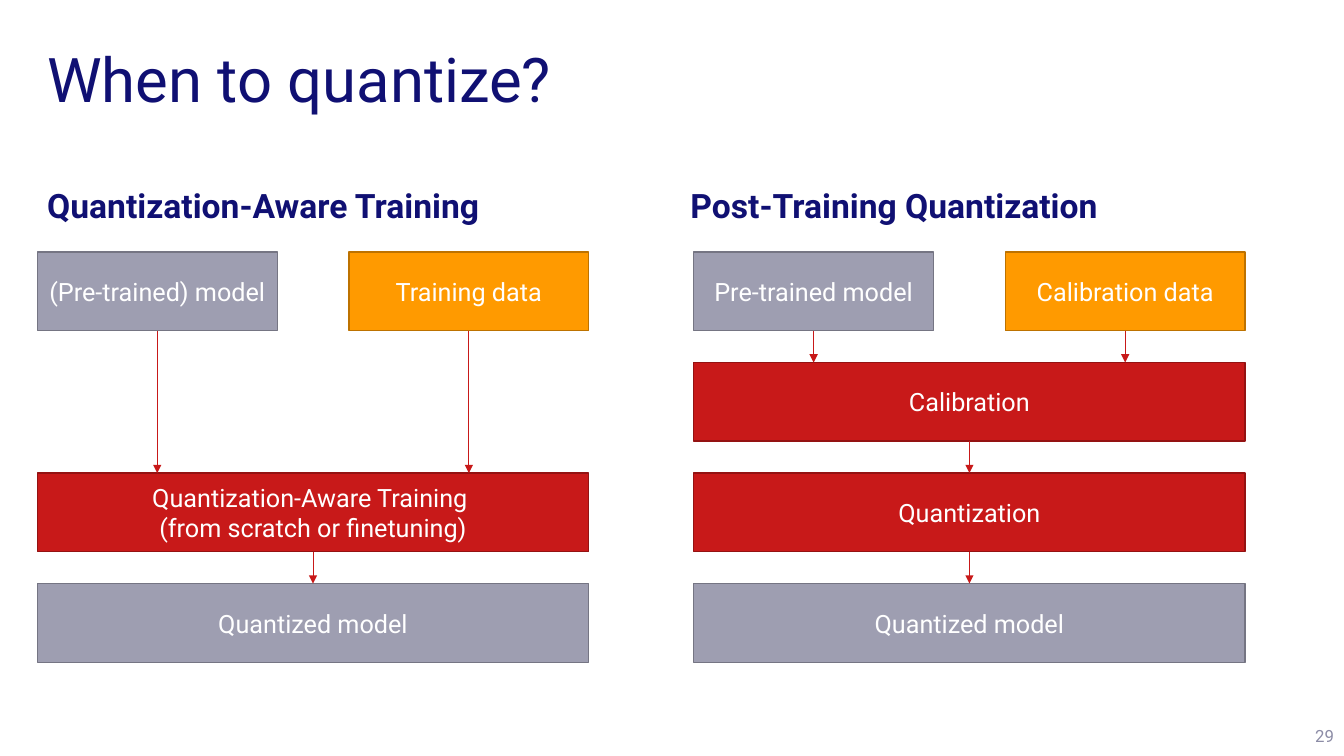
import pptx
import pptx.dml.color
import pptx.enum.shapes
import pptx.enum.text
import pptx.oxml
import pptx.oxml.ns
import pptx.util
from dataclasses import dataclass

Inches = pptx.util.Inches
Point = pptx.util.Pt
Color = pptx.dml.color.RGBColor.from_string
Align = pptx.enum.text.PP_ALIGN
Anchor = pptx.enum.text.MSO_ANCHOR


@dataclass(frozen=True)
class Theme:
    font: str = "Roboto"
    title_size: int = 44
    heading_size: int = 24
    box_size: int = 18
    number_size: int = 12
    ink: str = "101073"
    number: str = "8C8CA6"
    box_text: str = "FFFFFF"
    arrow: str = "C81919"
    # fill and outline of each kind of box
    model: tuple = ("9E9EB1", "757583")
    data: tuple = ("FF9A00", "BD7200")
    step: tuple = ("C81919", "941212")


theme = Theme()

# Grid: four rows of boxes; a row holds two inputs or one full-width box
MARGIN = 0.37
ROW_TOP, LAST_ROW_TOP = 2.5, 5.79
ROW_PITCH = (LAST_ROW_TOP - ROW_TOP) / 3
BOX_HEIGHT = 0.78
FLOW_WIDTH = 5.47
INPUT_WIDTH = 2.38
INPUT_PITCH = FLOW_WIDTH - INPUT_WIDTH

presentation = pptx.Presentation()
presentation.slide_width = Inches(13.33)
presentation.slide_height = Inches(7.5)
slide = presentation.slides.add_slide(presentation.slide_layouts[6])


def write(shape, lines, size, color, align, anchor, bold=False, spacing=1.0):
    frame = shape.text_frame
    frame.word_wrap = True
    frame.vertical_anchor = anchor
    for index, line in enumerate(lines):
        paragraph = frame.add_paragraph() if index else frame.paragraphs[0]
        paragraph.alignment = align
        paragraph.line_spacing = spacing
        run = paragraph.add_run()
        run.text = line
        run.font.name = theme.font
        run.font.size = Point(size)
        run.font.bold = bold
        run.font.color.rgb = Color(color)


def add_arrow(source, target):
    """Point straight down from the middle of source to the top of target."""
    x = source.left + source.width // 2
    connector = slide.shapes.add_connector(
        pptx.enum.shapes.MSO_CONNECTOR.STRAIGHT,
        x, source.top + source.height, x, target.top)
    connector.line.color.rgb = Color(theme.arrow)
    connector.line.width = Point(0.5)
    namespace = pptx.oxml.ns.nsdecls("a")
    connector.line._get_or_add_ln().append(
        pptx.oxml.parse_xml(f'<a:tailEnd {namespace} type="triangle"/>'))
    connector._element.spPr.append(
        pptx.oxml.parse_xml(f"<a:effectLst {namespace}/>"))


title = slide.shapes.add_textbox(
    Inches(MARGIN), Inches(0.4), Inches(12.6), Inches(0.83))
write(title, ["When to quantize?"], theme.title_size, theme.ink,
      Align.LEFT, Anchor.MIDDLE, spacing=0.9)

number = slide.shapes.add_textbox(
    Inches(12.65), Inches(7.1), Inches(0.68), Inches(0.4))
write(number, ["29"], theme.number_size, theme.number,
      Align.RIGHT, Anchor.MIDDLE)

# Each flow: heading, heading left, boxes left, input labels, (row, lines) of steps
flows = [
    ("Quantization-Aware Training", MARGIN, MARGIN,
     ["(Pre-trained) model", "Training data"],
     [(2, ["Quantization-Aware Training ", "(from scratch or finetuning)"])]),
    ("Post-Training Quantization", 6.75, 6.88,
     ["Pre-trained model", "Calibration data"],
     [(1, ["Calibration"]), (2, ["Quantization"])]),
]

for heading, heading_left, left, inputs, steps in flows:
    heading_box = slide.shapes.add_textbox(
        Inches(heading_left), Inches(1.39), Inches(6.2), Inches(0.9))
    write(heading_box, [heading], theme.heading_size, theme.ink,
          Align.LEFT, Anchor.BOTTOM, bold=True, spacing=0.9)

    cells = [(0, column * INPUT_PITCH, INPUT_WIDTH, [label], colors)
             for column, (label, colors)
             in enumerate(zip(inputs, (theme.model, theme.data)))]
    cells += [(row, 0, FLOW_WIDTH, lines, theme.step) for row, lines in steps]
    cells.append((3, 0, FLOW_WIDTH, ["Quantized model"], theme.model))

    boxes = []
    for row, offset, width, lines, (fill, outline) in cells:
        box = slide.shapes.add_shape(
            pptx.enum.shapes.MSO_SHAPE.RECTANGLE,
            Inches(left + offset), Inches(ROW_TOP + row * ROW_PITCH),
            Inches(width), Inches(BOX_HEIGHT))
        box.shadow.inherit = False
        box.fill.solid()
        box.fill.fore_color.rgb = Color(fill)
        box.line.color.rgb = Color(outline)
        box.line.width = Point(1)
        write(box, lines, theme.box_size, theme.box_text,
              Align.CENTER, Anchor.MIDDLE)
        boxes.append(box)

    model, data, *stages = boxes
    add_arrow(model, stages[0])
    add_arrow(data, stages[0])
    for stage, following in zip(stages, stages[1:]):
        add_arrow(stage, following)

presentation.save("out.pptx")
